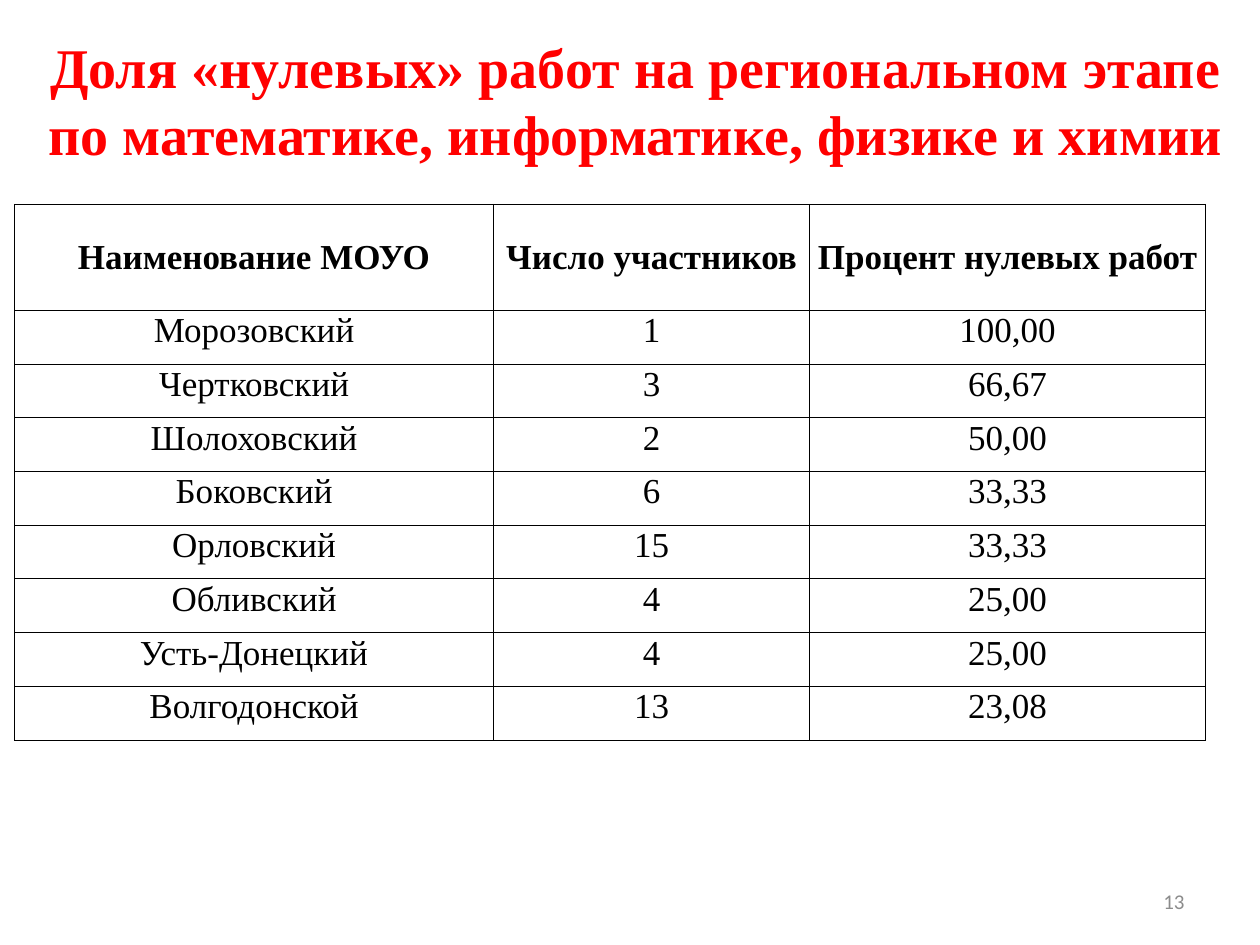
from lxml.etree import SubElement
from pptx import Presentation
from pptx.dml.color import RGBColor
from pptx.enum.text import MSO_ANCHOR as Anchor, PP_ALIGN as Align
from pptx.oxml.ns import qn
from pptx.util import Pt

HEADERS = ["Наименование МОУО", "Число участников", "Процент нулевых работ"]
DISTRICTS = [
    ["Морозовский", "1", "100,00"],
    ["Чертковский", "3", "66,67"],
    ["Шолоховский", "2", "50,00"],
    ["Боковский", "6", "33,33"],
    ["Орловский", "15", "33,33"],
    ["Обливский", "4", "25,00"],
    ["Усть-Донецкий", "4", "25,00"],
    ["Волгодонской", "13", "23,08"],
]


def color(hex_value):
    return RGBColor.from_string(hex_value)


class SlideBuilder:
    """Holds the style and the current slide."""

    serif = "Times New Roman"
    sans = "Calibri"
    black, red, gray = "000000", "FF0000", "8C8C8C"

    def __init__(self, slide):
        self.slide = slide

    def set_text(self, frame, text, font_color, align, **font_values):
        frame.text = text
        paragraph = frame.paragraphs[0]
        paragraph.alignment = align
        font = paragraph.runs[0].font
        for name, value in font_values.items():
            setattr(font, name, value)
        font.color.rgb = color(font_color)

    def title(self, text, left, top, width, height):
        shape = self.slide.shapes.title
        box = {"left": left, "top": top, "width": width, "height": height}
        for name, value in box.items():
            setattr(shape, name, Pt(value))
        frame = shape.text_frame
        margins = {"margin_left": Pt(4), "margin_right": Pt(4)}
        layout = {"word_wrap": True, "vertical_anchor": Anchor.TOP, **margins}
        for name, value in layout.items():
            setattr(frame, name, value)
        self.set_text(frame, text, self.red, Align.CENTER,
                      name=self.serif, size=Pt(32), bold=True)

    def page_number(self, text, left, top, width, height):
        shape = self.slide.shapes.add_textbox(Pt(left), Pt(top), Pt(width), Pt(height))
        frame = shape.text_frame
        frame.word_wrap = True
        frame.vertical_anchor = Anchor.MIDDLE
        self.set_text(frame, text, self.gray, Align.RIGHT, name=self.sans, size=Pt(12))

    def borders(self, cell):
        properties = cell._tc.get_or_add_tcPr()
        for position, side in enumerate(("lnL", "lnR", "lnT", "lnB")):
            line = properties.makeelement(qn(f"a:{side}"), {"w": str(Pt(0.5))})
            fill = SubElement(line, qn("a:solidFill"))
            SubElement(fill, qn("a:srgbClr"), val=self.black)
            properties.insert(position, line)

    def table(self, rows, left, top, column_widths, row_heights):
        frame = self.slide.shapes.add_table(
            len(rows), len(column_widths), Pt(left), Pt(top),
            Pt(sum(column_widths)), Pt(sum(row_heights)))
        table = frame.table
        for column, width in zip(table.columns, column_widths):
            column.width = Pt(width)
        for row_index, (row, height) in enumerate(zip(rows, row_heights)):
            table.rows[row_index].height = Pt(height)
            is_header = row_index == 0
            layout = {
                "margin_left": Pt(0.7), "margin_right": Pt(0.7),
                "margin_top": Pt(0.7), "margin_bottom": 0,
                "vertical_anchor": Anchor.MIDDLE if is_header else Anchor.TOP,
            }
            for column_index, text in enumerate(row):
                cell = table.cell(row_index, column_index)
                for name, value in layout.items():
                    setattr(cell, name, value)
                cell.fill.background()
                self.borders(cell)
                self.set_text(cell.text_frame, text, self.black, Align.CENTER,
                              name=self.serif, size=Pt(20), bold=is_header)


def main():
    presentation = Presentation()
    presentation.slide_width, presentation.slide_height = Pt(720), Pt(540)
    title_only = presentation.slide_layouts[5]
    builder = SlideBuilder(presentation.slides.add_slide(title_only))

    # Heading
    builder.title("Доля «нулевых» работ на региональном этапе "
                  "по математике, информатике, физике и химии", 20.2, 15.1, 686, 96.5)

    # Share of zero-score papers by district
    builder.table([HEADERS] + DISTRICTS, 8.4, 116.8, [273.6, 180.8, 226],
                  [60.5] + [30.7] * len(DISTRICTS))

    # Page number
    builder.page_number("13", 516, 500.5, 168, 28.8)

    presentation.save("out.pptx")


if __name__ == "__main__":
    main()
